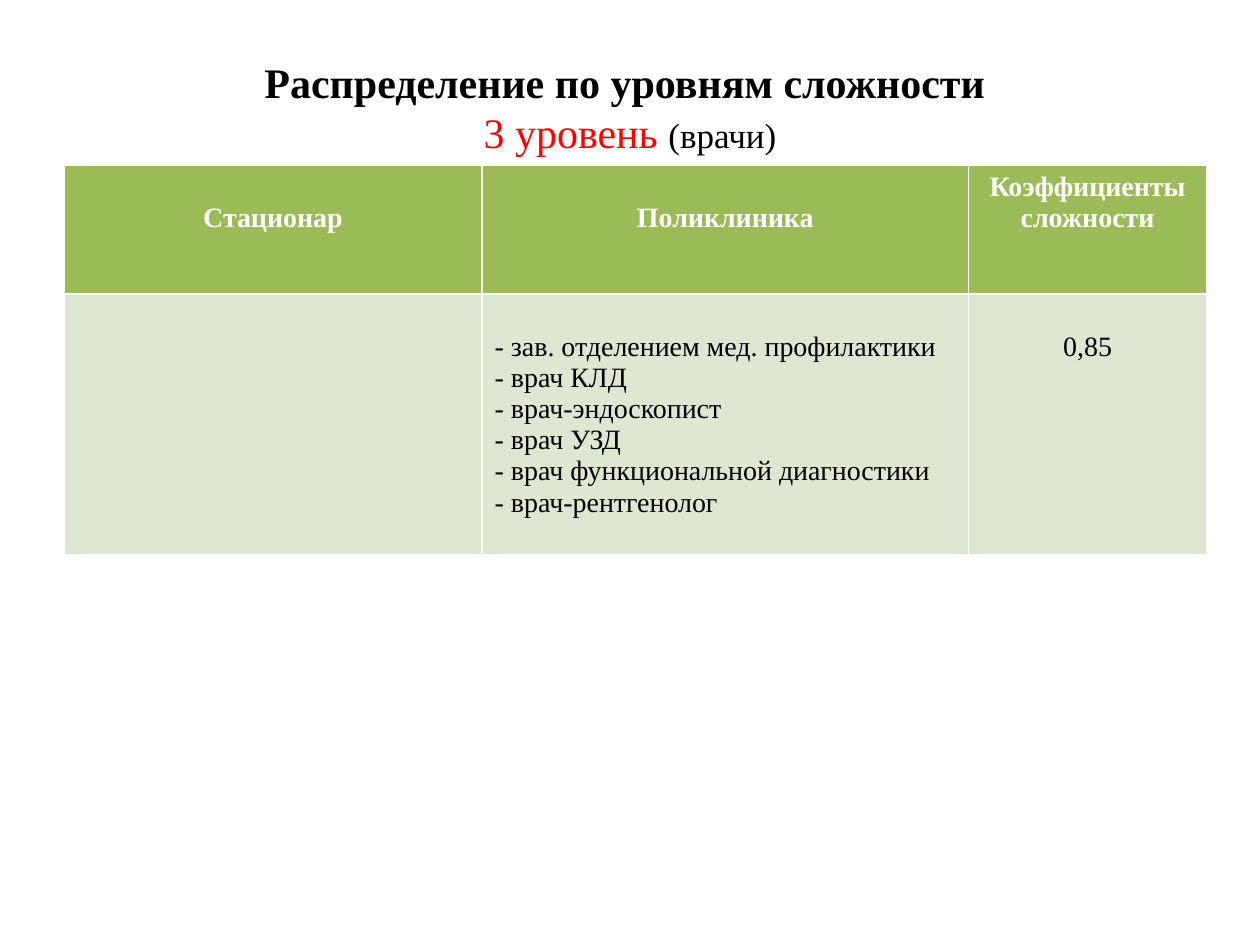
from lxml.etree import SubElement
from pptx import Presentation
from pptx.dml.color import RGBColor
from pptx.enum.text import MSO_ANCHOR, PP_ALIGN
from pptx.oxml.ns import qn
from pptx.util import Pt

FONT = "Times New Roman"
COLORS = {"black": "000000", "red": "FF0000", "white": "FFFFFF",
          "head": "9BBB59", "body": "DEE7D1"}


def style(run, size, color, bold=False):
    font = run.font
    font.name, font.size, font.bold = FONT, Pt(size), bold
    font.color.rgb = RGBColor.from_string(COLORS[color])


deck = Presentation()
deck.slide_width, deck.slide_height = Pt(720), Pt(540)
slide = deck.slides.add_slide(deck.slide_layouts[5])

# Title: two lines in one paragraph
title = slide.shapes.title
title.left, title.top, title.width, title.height = Pt(36), Pt(21.6), Pt(648), Pt(78.5)
title.text_frame.vertical_anchor = MSO_ANCHOR.MIDDLE
para = title.text_frame.paragraphs[0]
para.alignment = PP_ALIGN.CENTER
parts = [("Распределение по уровням сложности ", 24, "black", True),
         ("3 уровень ", 24, "red", False),
         ("(врачи)", 20, "black", False)]
for i, (text, size, color, bold) in enumerate(parts):
    if i == 1:
        para.add_line_break()
        SubElement(para._p.find(qn("a:br")), qn("a:rPr"), sz="2400")
    run = para.add_run()
    run.text = text
    style(run, size, color, bold)

# Table: the default style draws the white borders
heads = ["Стационар", "Поликлиника", "Коэффициенты сложности"]
doctors = ["- зав. отделением мед. профилактики", "- врач КЛД",
           "- врач-эндоскопист", "- врач УЗД",
           "- врач функциональной диагностики", "- врач-рентгенолог"]
rows = [heads, ["", "\n".join(doctors), "0,85"]]
widths = [239, 278, 136]
heights = [73.5, 149]

table = slide.shapes.add_table(2, 3, Pt(36.5), Pt(94.5), Pt(sum(widths)),
                               Pt(sum(heights))).table
for col, width in zip(table.columns, widths):
    col.width = Pt(width)
for r, texts in enumerate(rows):
    table.rows[r].height = Pt(heights[r])
    head = r == 0
    for c, text in enumerate(texts):
        cell = table.cell(r, c)
        cell.fill.solid()
        cell.fill.fore_color.rgb = RGBColor.from_string(COLORS["head" if head else "body"])
        cell.vertical_anchor = MSO_ANCHOR.TOP
        # All but the two-line heading start one line lower
        cell.margin_top = Pt(3.6 if text == heads[2] else 21.5)
        cell.text_frame.text = text
        for para in cell.text_frame.paragraphs:
            para.alignment = PP_ALIGN.CENTER if head or c == 2 else PP_ALIGN.LEFT
            for run in para.runs:
                style(run, 16, "white" if head else "black", head)

deck.save("out.pptx")
